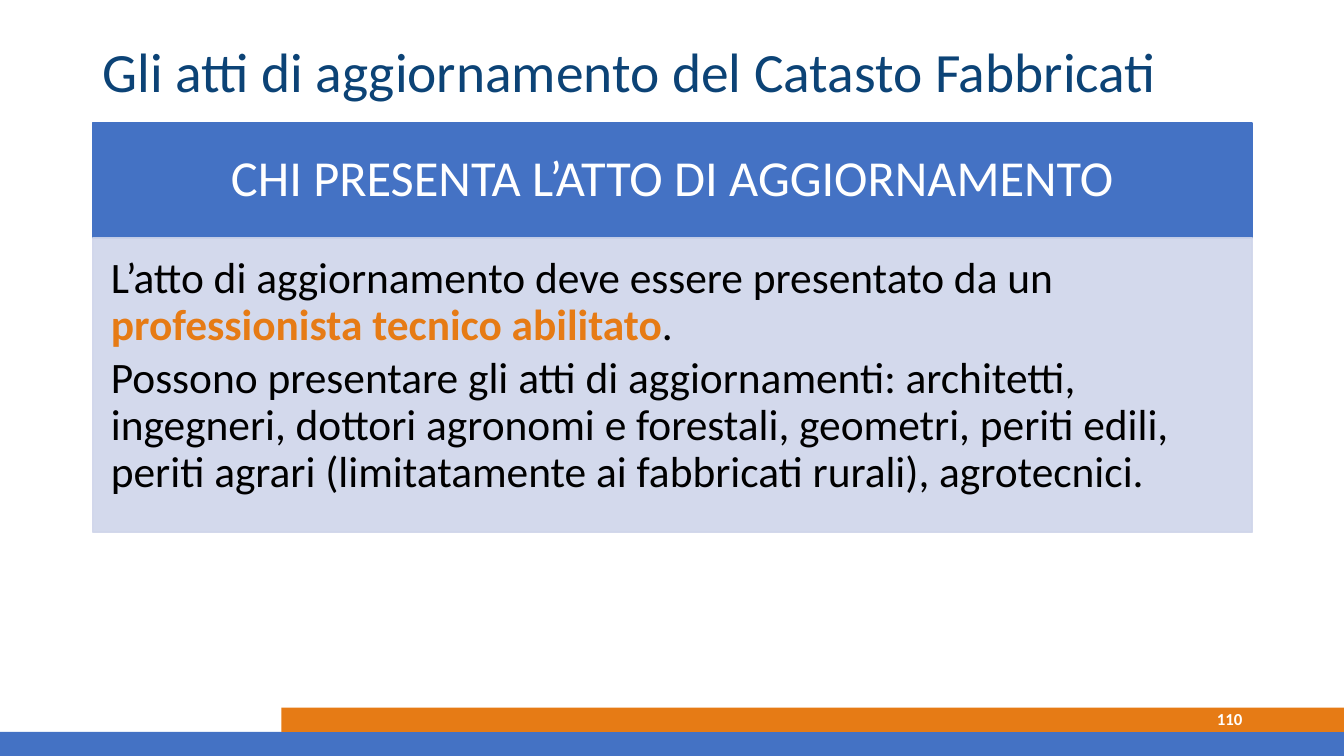
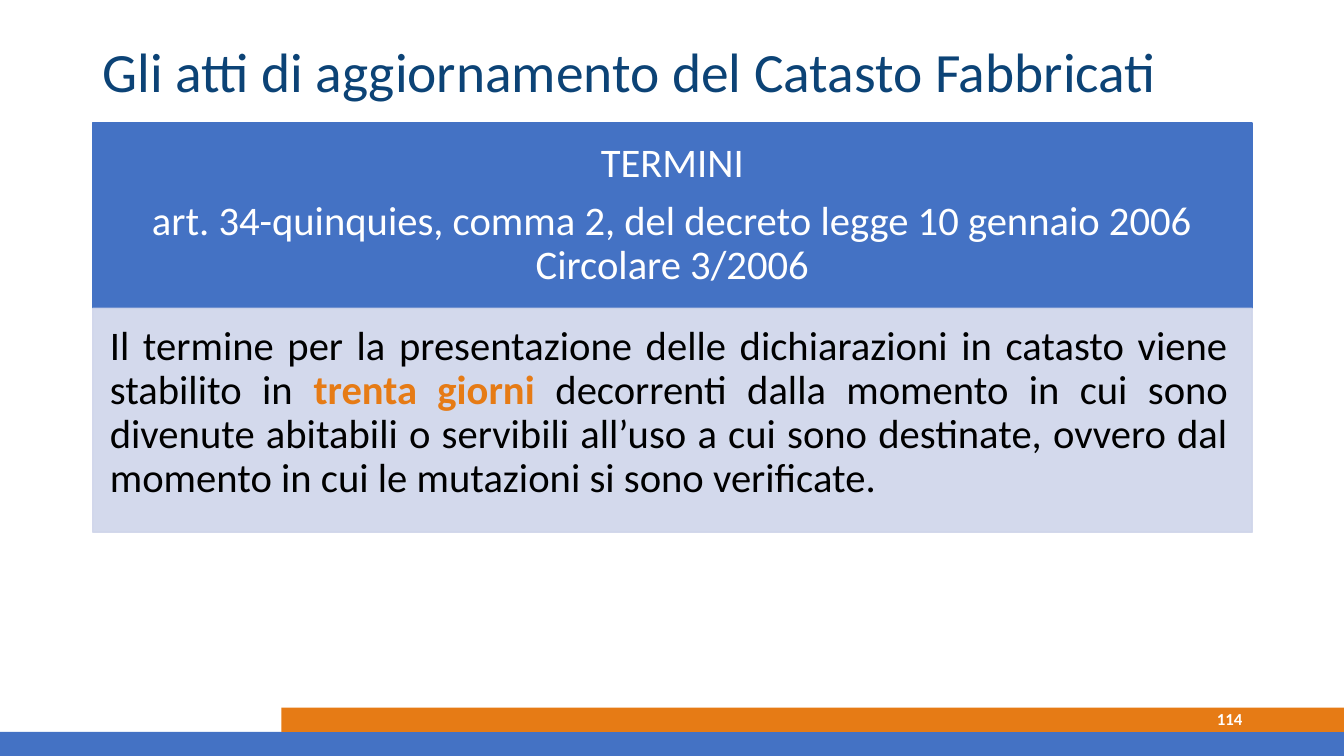
from dataclasses import dataclass

from lxml import etree
from pptx import Presentation
from pptx import util as u
from pptx.dml.color import RGBColor
from pptx.enum import shapes, text
from pptx.oxml.ns import qn

LEFT, CENTER, RIGHT, JUSTIFY = (
    text.PP_ALIGN.LEFT, text.PP_ALIGN.CENTER, text.PP_ALIGN.RIGHT, text.PP_ALIGN.JUSTIFY)

TITLE = "Gli atti di aggiornamento del Catasto Fabbricati"

# Lengths are px, 100 to the inch; insets run left, top, right, bottom.
# A paragraph is a list of plain strings and (emphasised,) tuples.
SLIDES = [
    {
        "number": "110",
        "heading": [["CHI PRESENTA L’ATTO DI AGGIORNAMENTO"]],
        "heading_size": 36,
        "heading_height": 114,
        "heading_insets": (28, 16, 28, 16),
        "body": [
            ["L’atto di aggiornamento deve essere presentato da un ",
             ("professionista tecnico abilitato",), "."],
            ["Possono presentare gli atti di aggiornamenti: architetti, ingegneri, "
             "dottori agronomi e forestali, geometri, periti edili, periti agrari "
             "(limitatamente ai fabbricati rurali), agrotecnici."],
        ],
        "body_size": 31,
        "body_align": LEFT,
        "body_insets": (18, 18, 24, 27),
    },
    {
        "number": "114",
        "heading": [
            ["TERMINI"],
            ["art. 34-quinquies, comma 2, del decreto legge 10 gennaio 2006 Circolare 3/2006"],
        ],
        "heading_size": 29,
        "heading_height": 184,
        "heading_insets": (23, 13, 23, 13),
        "body": [
            ["Il termine per la presentazione delle dichiarazioni in catasto viene stabilito in ",
             ("trenta giorni ",),
             "decorrenti dalla momento in cui sono divenute abitabili o servibili all’uso "
             "a cui sono destinate, ovvero dal momento in cui le mutazioni si sono verificate."],
        ],
        "body_size": 29,
        "body_align": JUSTIFY,
        "body_insets": (17, 17, 23, 25),
    },
]


@dataclass(frozen=True)
class Theme:
    font: str = "Calibri"
    blue: str = "4472C4"
    orange: str = "E67B15"
    navy: str = "0C4376"
    pale: str = "CFD5EA"
    white: str = "FFFFFF"
    black: str = "000000"
    title_size: float = 39.6
    number_size: int = 12
    line_spacing: float = 0.9
    heading_gap: float = 0.35  # space after, as a share of the type size
    body_gap: float = 0.15
    pale_opacity: int = 90


THEME = Theme()
PAGE_W, PAGE_H = 1333, 750
MARGIN, CONTENT_W = 92, 1150
TITLE_TOP, TITLE_H = 40, 67
PANEL_TOP, PANEL_BOTTOM = 122, 528
STRIPE_H, ORANGE_LEFT = 24, 279
NUMBER_W, NUMBER_H = 300, 40
DEFAULT_INSETS = (10, 5, 10, 5)


def px(length):
    return u.Emu(length * 9144)


def color(value):
    return RGBColor.from_string(value)


def set_opacity(fill_owner, percent):
    for srgb in fill_owner.iter(qn("a:srgbClr")):
        etree.SubElement(srgb, qn("a:alpha"), val=str(percent * 1000))


def add_rect(page, area, fill, outlined=False, opacity=100):
    box = page.shapes.add_shape(shapes.MSO_SHAPE.RECTANGLE, *map(px, area))
    box.shadow.inherit = False
    box.fill.solid()
    box.fill.fore_color.rgb = color(fill)
    if outlined:
        box.line.color.rgb = color(fill)
        box.line.width = u.Pt(1)
    else:
        box.line.fill.background()
    if opacity < 100:
        set_opacity(box._element.spPr, opacity)
    return box


def write(box, paragraphs, size, ink, align=LEFT, anchor=text.MSO_ANCHOR.MIDDLE,
          insets=DEFAULT_INSETS, gap=0, bold=False, line_spacing=THEME.line_spacing):
    frame = box.text_frame
    frame.word_wrap = True
    frame.vertical_anchor = anchor
    (frame.margin_left, frame.margin_top,
     frame.margin_right, frame.margin_bottom) = map(px, insets)
    for index, parts in enumerate(paragraphs):
        para = frame.add_paragraph() if index else frame.paragraphs[0]
        para.alignment = align
        para.line_spacing = line_spacing
        para.space_after = u.Pt(size * gap)
        para.font.name = THEME.font
        para.font.size = u.Pt(size)
        para.font.bold = bold
        para.font.color.rgb = color(ink)
        for part in parts:
            span = para.add_run()
            if isinstance(part, tuple):
                span.text = part[0]
                span.font.bold = True
                span.font.color.rgb = color(THEME.orange)
            else:
                span.text = part


def add_text(page, area, *args, **style):
    write(page.shapes.add_textbox(*map(px, area)), *args, **style)


def add_frame(page, number):
    """Draw the footer stripes, the page number and the title."""
    blue_top = PAGE_H - STRIPE_H
    orange_top = blue_top - STRIPE_H
    add_rect(page, (0, blue_top, PAGE_W, STRIPE_H), THEME.blue)
    add_rect(page, (ORANGE_LEFT, orange_top, PAGE_W - ORANGE_LEFT, STRIPE_H), THEME.orange)
    number_left = MARGIN + CONTENT_W - NUMBER_W
    add_text(page, (number_left, 693, NUMBER_W, NUMBER_H), [[number]],
             THEME.number_size, THEME.white, align=RIGHT, bold=True, line_spacing=1.0)
    add_text(page, (MARGIN, TITLE_TOP, CONTENT_W, TITLE_H), [[TITLE]],
             THEME.title_size, THEME.navy)


def add_panel(page, slide):
    """Stack the heading band on the body, which fills what is left."""
    body_top = PANEL_TOP + slide["heading_height"]
    heading = add_rect(page, (MARGIN, PANEL_TOP, CONTENT_W, slide["heading_height"]),
                       THEME.blue, outlined=True)
    write(heading, slide["heading"], slide["heading_size"], THEME.white, align=CENTER,
          insets=slide["heading_insets"], gap=THEME.heading_gap)
    body = add_rect(page, (MARGIN, body_top, CONTENT_W, PANEL_BOTTOM - body_top),
                    THEME.pale, outlined=True, opacity=THEME.pale_opacity)
    write(body, slide["body"], slide["body_size"], THEME.black, align=slide["body_align"],
          anchor=text.MSO_ANCHOR.TOP, insets=slide["body_insets"], gap=THEME.body_gap)


def main():
    deck = Presentation()
    deck.slide_width, deck.slide_height = px(PAGE_W), px(PAGE_H)
    for slide in SLIDES:
        page = deck.slides.add_slide(deck.slide_layouts[6])
        add_frame(page, slide["number"])
        add_panel(page, slide)
    deck.save("out.pptx")


if __name__ == "__main__":
    main()
